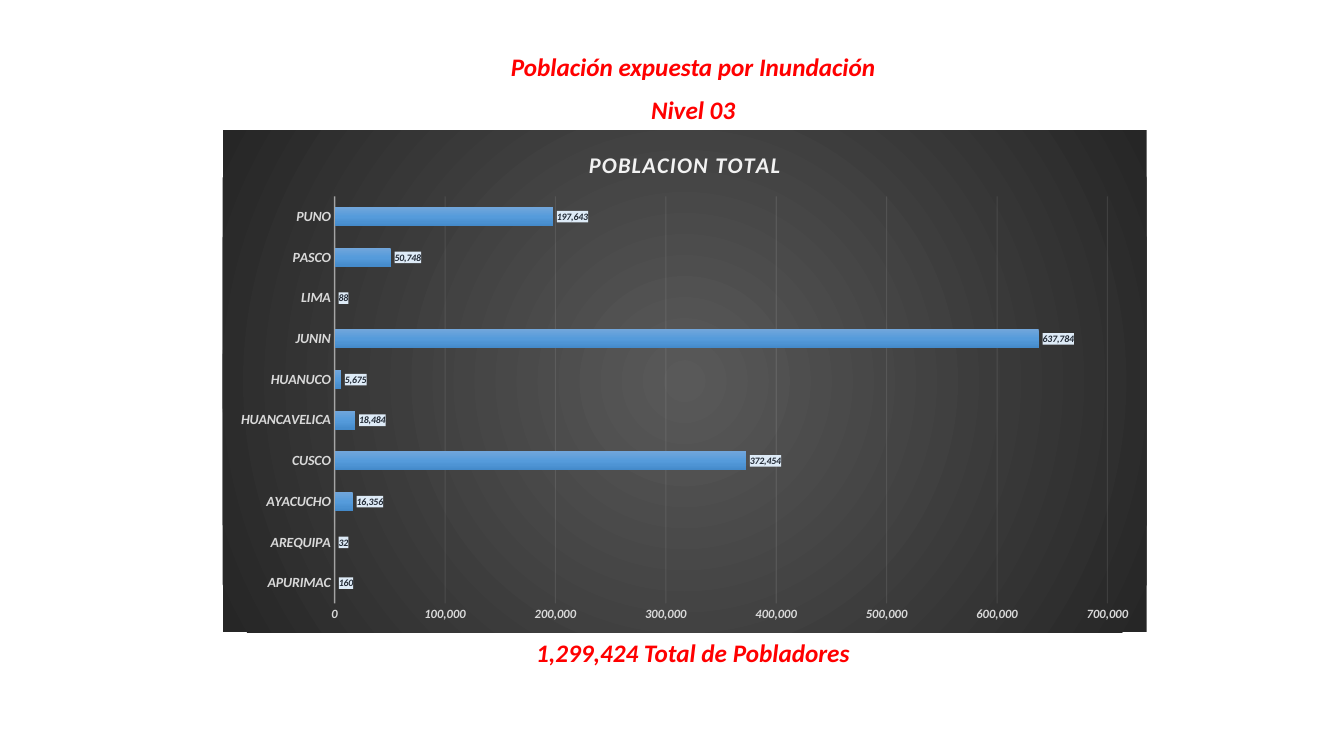
from lxml.etree import SubElement
from pptx import Presentation
from pptx.chart.data import CategoryChartData
from pptx.dml.color import RGBColor
from pptx.enum.chart import XL_CHART_TYPE as ChartType, XL_LABEL_POSITION as LabelPos, XL_TICK_MARK as Tick
from pptx.enum.text import MSO_ANCHOR as Anchor, PP_ALIGN as Align
from pptx.oxml import parse_xml
from pptx.oxml.ns import nsdecls, qn
from pptx.util import Cm, Pt

FONT = "Calibri"
COLORS = {
    "heading": "FF0000", "axis_text": "D9D9D9", "axis_line": "F2F2F2",
    "chart_title": "F2F2F2", "label_text": "222A35", "label_fill": "DEEBF7",
}
BACKDROP = [(0, "595959"), (100, "262626")]
BAR = [(0, "71A6DB"), (50, "559BDB"), (100, "448ACA")]

HEADING = ("Población expuesta por Inundación", (12.57, 1.17, 9.8, 1.03))
CAPTIONS = [
    ("Nivel 03", (16.1, 2.24, 2.74, 1.03)),
    ("1,299,424 Total de Pobladores", (13.21, 15.93, 8.51, 1.03)),
]
CHART_TITLE = "POBLACION TOTAL"
CHART_BOX = (5.61, 3.28, 23.29, 12.65)
POPULATION = {
    "APURIMAC": 160, "AREQUIPA": 32, "AYACUCHO": 16356, "CUSCO": 372454,
    "HUANCAVELICA": 18484, "HUANUCO": 5675, "JUNIN": 637784, "LIMA": 88,
    "PASCO": 50748, "PUNO": 197643,
}


def style(font, size, color):
    font.name, font.size = FONT, Pt(size)
    font.bold = font.italic = True
    font.color.rgb = RGBColor.from_string(COLORS[color])


def write(shape, text, wrap):
    frame = shape.text_frame
    frame.text = text
    frame.word_wrap = wrap
    frame.vertical_anchor = Anchor.TOP
    frame.paragraphs[0].alignment = Align.CENTER
    style(frame.paragraphs[0].runs[0].font, 18, "heading")


def gradient(stops, direction):
    marks = "".join(f'<a:gs pos="{at * 1000}"><a:srgbClr val="{color}"/></a:gs>' for at, color in stops)
    return parse_xml(f'<a:gradFill {nsdecls("a")} rotWithShape="1"><a:gsLst>{marks}</a:gsLst>{direction}</a:gradFill>')


def thin_line(part, width, opacity):
    line = part.format.line
    line.width = Pt(width)
    line.color.rgb = RGBColor.from_string(COLORS["axis_line"])
    color = part._element.find(f'.//{qn("a:ln")}//{qn("a:srgbClr")}')
    SubElement(color, qn("a:alpha"), val=str(opacity * 1000))


def add_population_chart(slide):
    data = CategoryChartData(number_format="#,##0")
    data.categories = list(POPULATION)
    data.add_series(CHART_TITLE, list(POPULATION.values()))
    chart = slide.shapes.add_chart(ChartType.BAR_CLUSTERED, *map(Cm, CHART_BOX), data).chart
    chart.has_legend = False
    chart.font.name, chart.font.size = FONT, Pt(10)

    title = chart.chart_title.text_frame
    title.text = CHART_TITLE
    title_run = title.paragraphs[0].runs[0]
    style(title_run.font, 16, "chart_title")
    title_run.font._element.set("spc", "100")
    chart.chart_title.include_in_layout = False

    regions, people = chart.category_axis, chart.value_axis
    for axis, size in ((regions, 10), (people, 9)):
        axis.major_tick_mark = axis.minor_tick_mark = Tick.NONE
        style(axis.tick_labels.font, size, "axis_text")
    regions.has_major_gridlines = False
    thin_line(regions, 1, 54)
    people.has_major_gridlines = True
    people.format.line.fill.background()
    thin_line(people.major_gridlines, 0.75, 10)
    people.minimum_scale, people.maximum_scale, people.major_unit = 0, 700000, 100000
    people.tick_labels.number_format = "#,##0"
    people.tick_labels.number_format_is_linked = False

    plot = chart.plots[0]
    plot.gap_width, plot.overlap, plot.vary_by_categories = 115, -20, False
    bars = plot.series[0]
    bars._element.get_or_add_spPr().append(gradient(BAR, '<a:lin ang="5400000" scaled="0"/>'))

    labels = bars.data_labels
    labels.show_value, labels.position = True, LabelPos.OUTSIDE_END
    labels.number_format, labels.number_format_is_linked = "#,##0", False
    style(labels.font, 7, "label_text")
    label_box = parse_xml(
        f'<c:spPr {nsdecls("c", "a")}><a:solidFill><a:srgbClr val="{COLORS["label_fill"]}"/>'
        '</a:solidFill><a:ln><a:noFill/></a:ln></c:spPr>')
    labels._element.find(qn("c:numFmt")).addnext(label_box)

    backdrop = parse_xml(f'<c:spPr {nsdecls("c", "a")}><a:ln><a:noFill/></a:ln></c:spPr>')
    center = '<a:path path="circle"><a:fillToRect l="50000" t="50000" r="50000" b="50000"/></a:path>'
    backdrop.insert(0, gradient(BACKDROP, center))
    chart.element.find(qn("c:chart")).addnext(backdrop)


def main():
    deck = Presentation()
    deck.slide_width, deck.slide_height = Cm(33.87), Cm(19.05)
    slide = deck.slides.add_slide(deck.slide_layouts[5])

    text, box = HEADING
    heading = slide.shapes.title
    heading.left, heading.top, heading.width, heading.height = map(Cm, box)
    write(heading, text, False)
    for text, box in CAPTIONS:
        write(slide.shapes.add_textbox(*map(Cm, box)), text, True)
    add_population_chart(slide)
    deck.save("out.pptx")


if __name__ == "__main__":
    main()
